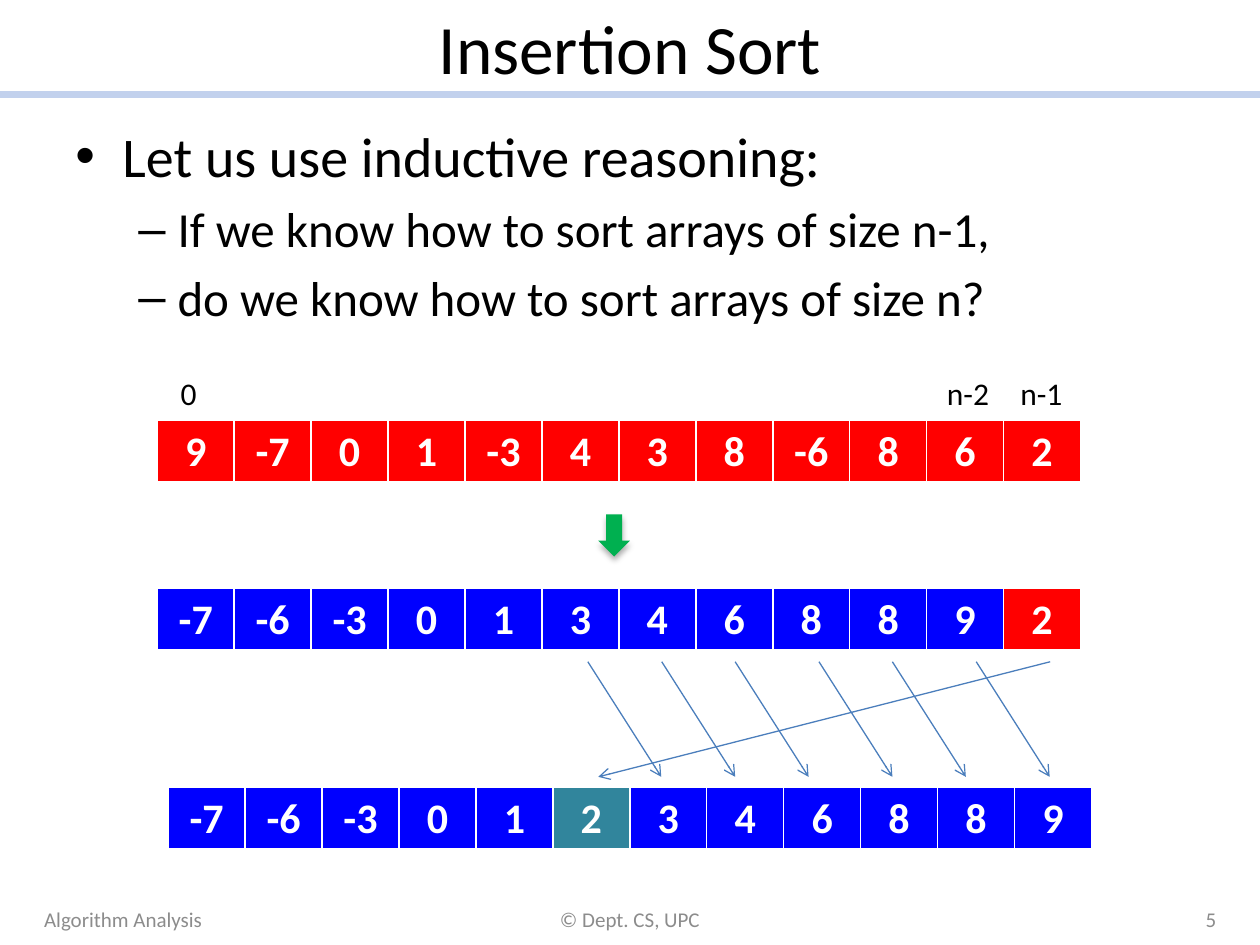
from lxml import etree
from pptx import Presentation
from pptx.dml.color import RGBColor
from pptx.enum import shapes, text
from pptx.oxml.ns import qn
from pptx.util import Cm, Pt

BLACK = RGBColor(0x00, 0x00, 0x00)
WHITE = RGBColor(0xFF, 0xFF, 0xFF)
GRAY = RGBColor(0x8C, 0x8C, 0x8C)
RED = RGBColor(0xFF, 0x00, 0x00)
BLUE = RGBColor(0x00, 0x00, 0xFF)
TEAL = RGBColor(0x31, 0x85, 0x9C)
GREEN = RGBColor(0x00, 0xB0, 0x50)
RULE_BLUE = RGBColor(0xC2, 0xD1, 0xED)
ARROW_BLUE = RGBColor(0x4B, 0x7E, 0xBC)

FONT = "Calibri"
LEFT, CENTER, RIGHT = text.PP_ALIGN.LEFT, text.PP_ALIGN.CENTER, text.PP_ALIGN.RIGHT
TOP, MIDDLE = text.MSO_ANCHOR.TOP, text.MSO_ANCHOR.MIDDLE
ARRAY_WIDTH, ARRAY_HEIGHT = 18.62, 1.27


def sub(parent, tag, **attrs):
    return etree.SubElement(parent, qn(tag), {k: str(v) for k, v in attrs.items()})


def write(p, words, size=18, color=BLACK, bold=False, align=LEFT):
    p.alignment = align
    r = p.add_run()
    r.text = words
    r.font.name, r.font.size, r.font.bold = FONT, Pt(size), bold
    r.font.color.rgb = color


def add_box(s, x, y, w, h, anchor=TOP, wrap=True):
    tf = s.shapes.add_textbox(Cm(x), Cm(y), Cm(w), Cm(h)).text_frame
    tf.word_wrap = wrap
    tf.vertical_anchor = anchor
    return tf


def add_label(s, words, x, y, w, h, anchor=TOP, wrap=True, **fmt):
    tf = add_box(s, x, y, w, h, anchor, wrap)
    write(tf.paragraphs[0], words, **fmt)


def add_bullets(s, items, x, y, w, h):
    """Write (level, words) items with a bullet and a hanging indent."""
    styles = [("•", 32, 0.95, 0.95), ("–", 28, 2.06, 0.79)]
    tf = add_box(s, x, y, w, h)
    for i, (level, words) in enumerate(items):
        mark, size, margin, hang = styles[level]
        p = tf.add_paragraph() if i else tf.paragraphs[0]
        p.level = level
        p.space_before = Pt(size * 0.2)
        write(p, words, size=size)
        pPr = p._p.get_or_add_pPr()
        pPr.set("marL", str(Cm(margin)))
        pPr.set("indent", str(-Cm(hang)))
        sub(pPr, "a:buFont", typeface="Arial")
        sub(pPr, "a:buChar", char=mark)


def set_borders(cell):
    """Draw white cell borders, thicker at the bottom."""
    tcPr = cell._tc.get_or_add_tcPr()
    for i, (side, width) in enumerate([("L", 1), ("R", 1), ("T", 1), ("B", 3)]):
        ln = etree.Element(qn(f"a:ln{side}"), w=str(Pt(width)))
        sub(sub(ln, "a:solidFill"), "a:srgbClr", val=WHITE)
        tcPr.insert(i, ln)


def add_array(s, values, x, y, color, marked=None, mark_color=None):
    """Draw a one-row array; the cell at index marked has its own colour."""
    frame = s.shapes.add_table(1, len(values), Cm(x), Cm(y),
                               Cm(ARRAY_WIDTH), Cm(ARRAY_HEIGHT))
    table = frame.table
    table.first_row = table.horz_banding = False
    for i, value in enumerate(values):
        table.columns[i].width = Cm(ARRAY_WIDTH / len(values))
        cell = table.cell(0, i)
        cell.fill.solid()
        cell.fill.fore_color.rgb = mark_color if i == marked else color
        write(cell.text_frame.paragraphs[0], str(value), size=24, color=WHITE,
              bold=True, align=CENTER)
        set_borders(cell)


def add_line(s, x1, y1, x2, y2, color, width, arrow=False):
    c = s.shapes.add_connector(shapes.MSO_CONNECTOR.STRAIGHT,
                               Cm(x1), Cm(y1), Cm(x2), Cm(y2))
    c.line.color.rgb = color
    c.line.width = Pt(width)
    if arrow:
        sub(c.line._get_or_add_ln(), "a:tailEnd", type="arrow")
    sub(c._element.spPr, "a:effectLst")


def add_down_arrow(s, x, y, w, h):
    sp = s.shapes.add_shape(shapes.MSO_SHAPE.DOWN_ARROW, Cm(x), Cm(y), Cm(w), Cm(h))
    sp.fill.solid()
    sp.fill.fore_color.rgb = GREEN
    sp.line.fill.background()
    sp.shadow.inherit = False
    effects = sp._element.spPr.find(qn("a:effectLst"))
    shadow = sub(effects, "a:outerShdw", blurRad=Pt(3.5), dist=Pt(2.2),
                 dir=5400000, rotWithShape=0)
    sub(sub(shadow, "a:srgbClr", val=BLACK), "a:alpha", val=32000)


def main():
    prs = Presentation()
    prs.slide_width, prs.slide_height = Cm(25.4), Cm(19.05)
    s = prs.slides.add_slide(prs.slide_layouts[6])

    add_line(s, 0, 1.9, 25.4, 1.9, RULE_BLUE, 4)
    add_label(s, "Insertion Sort", 1.27, 0, 22.86, 1.9, MIDDLE, size=39.6, align=CENTER)
    add_bullets(s, [(0, "Let us use inductive reasoning:"),
                    (1, "If we know how to sort arrays of size n-1,"),
                    (1, "do we know how to sort arrays of size n?")],
                1.27, 2.33, 23.06, 14.4)

    for words, x, w, align in [("Algorithm Analysis", 0.64, 5.93, LEFT),
                               ("© Dept. CS, UPC", 8.68, 8.04, CENTER),
                               ("5", 18.84, 5.93, RIGHT)]:
        add_label(s, words, x, 18.03, w, 1.01, MIDDLE, size=12, color=GRAY, align=align)

    for words, x, w in [("0", 3.39, 0.86), ("n-2", 18.84, 1.45), ("n-1", 20.32, 1.45)]:
        add_label(s, words, x, 7.41, w, 1.02, wrap=False)

    unsorted = [9, -7, 0, 1, -3, 4, 3, 8, -6, 8, 6, 2]
    *head, last = unsorted
    result = sorted(unsorted)
    add_array(s, unsorted, 3.17, 8.47, RED)
    add_down_arrow(s, 12.06, 10.37, 0.64, 0.85)
    add_array(s, sorted(head) + [last], 3.17, 11.85, BLUE, len(head), RED)
    add_array(s, result, 3.39, 15.88, BLUE, result.index(last), TEAL)

    shift, y1, y2 = 1.48, 13.34, 15.66
    add_line(s, 21.17, y1, 12.06, y2, ARROW_BLUE, 0.75, arrow=True)
    for x in [11.85, 13.34, 14.82, 16.51, 17.99, 19.68]:
        add_line(s, x, y1, x + shift, y2, ARROW_BLUE, 0.75, arrow=True)

    prs.save("out.pptx")


if __name__ == "__main__":
    main()
